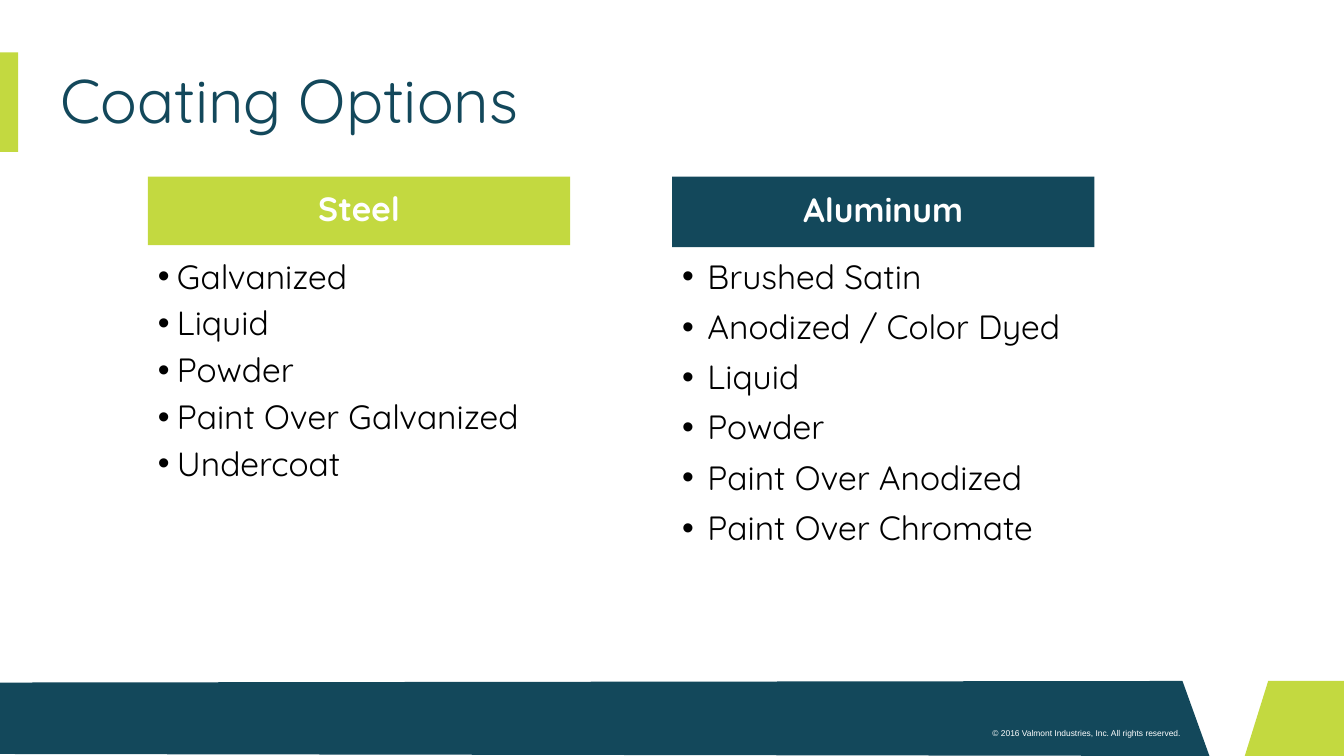
from dataclasses import dataclass

import lxml.etree
import pptx
import pptx.dml.color
import pptx.enum.shapes
import pptx.enum.text
import pptx.oxml.ns
import pptx.util

Cm = pptx.util.Cm
Align = pptx.enum.text.PP_ALIGN
Anchor = pptx.enum.text.MSO_ANCHOR


@dataclass(frozen=True)
class Theme:
    """Colours, fonts and type sizes of the slide."""
    navy: str = "13485B"
    lime: str = "C3D940"
    white: str = "FFFFFF"
    black: str = "000000"
    face: str = "Quicksand"
    legal_face: str = "Arial"
    title_size: int = 44
    body_size: int = 24
    legal_size: int = 6


THEME = Theme()


def paint(shape, color):
    """Give a shape a flat fill without outline or shadow."""
    shape.shadow.inherit = False
    shape.fill.solid()
    shape.fill.fore_color.rgb = pptx.dml.color.RGBColor.from_string(color)
    shape.line.fill.background()


def style(para, size, color, face=THEME.face, bold=False):
    """Set the font of a whole paragraph."""
    para.font.name = face
    para.font.size = pptx.util.Pt(size)
    para.font.bold = bold
    para.font.color.rgb = pptx.dml.color.RGBColor.from_string(color)


def add_panel(page, points, color):
    """Draw a filled polygon through points given in centimetres."""
    corners = [(Cm(x), Cm(y)) for x, y in points]
    builder = page.shapes.build_freeform(*corners[0], scale=1.0)
    builder.add_line_segments(corners[1:], close=True)
    paint(builder.convert_to_shape(), color)


def add_bar(page, left, top, width, height, color):
    """Draw a filled rectangle and return it."""
    bar = page.shapes.add_shape(pptx.enum.shapes.MSO_SHAPE.RECTANGLE,
                                Cm(left), Cm(top), Cm(width), Cm(height))
    paint(bar, color)
    return bar


def add_text_box(page, left, top, width, height, anchor=Anchor.TOP):
    """Add a wrapping text box and return its text frame."""
    box = page.shapes.add_textbox(Cm(left), Cm(top), Cm(width), Cm(height))
    frame = box.text_frame
    frame.word_wrap = True
    frame.vertical_anchor = anchor
    return frame


def add_heading(page, left, height, text, color):
    """Add the coloured heading of a column."""
    frame = add_bar(page, left, 4.45, 10.64, height, color).text_frame
    frame.vertical_anchor = Anchor.MIDDLE
    para = frame.paragraphs[0]
    para.text = text
    para.alignment = Align.CENTER
    para.line_spacing = 0.9
    style(para, THEME.body_size, THEME.white, bold=True)


def add_bullet(para, indent):
    """Give a paragraph a round bullet with a hanging indent."""
    properties = para._p.get_or_add_pPr()
    properties.set("marL", str(Cm(indent)))
    properties.set("indent", str(-Cm(indent)))
    qn = pptx.oxml.ns.qn
    lxml.etree.SubElement(properties, qn("a:buFont"), typeface="Arial")
    lxml.etree.SubElement(properties, qn("a:buChar"), char="•")


def add_list(page, left, items, indent, gap):
    """Add the bulleted options of a column."""
    frame = add_text_box(page, left, 6.43, 10.64, 9.7)
    for index, item in enumerate(items):
        para = frame.add_paragraph() if index else frame.paragraphs[0]
        para.text = item
        add_bullet(para, indent)
        para.line_spacing = 0.9
        para.space_before = pptx.util.Pt(gap if index else 0)
        style(para, THEME.body_size, THEME.black)


def add_frame(page):
    """Add the footer panels, the edge accent and the copyright line."""
    add_panel(page, [(0, 17.2), (29.8, 17.16), (30.48, 19.05), (0, 19)], THEME.navy)
    add_panel(page, [(33.87, 17.16), (31.96, 17.16), (31.37, 19.05), (33.87, 19.05)],
              THEME.lime)
    add_bar(page, 0, 1.32, 0.46, 2.51, THEME.lime)
    para = add_text_box(page, 23.65, 18.23, 6.35, 0.51).paragraphs[0]
    para.text = "© 2016 Valmont Industries, Inc. All rights reserved."
    para.alignment = Align.RIGHT
    style(para, THEME.legal_size, THEME.white, THEME.legal_face)


def add_title(page, text):
    """Add the slide title."""
    para = add_text_box(page, 1.27, 0.76, 29.21, 3.68, Anchor.MIDDLE).paragraphs[0]
    para.text = text
    para.line_spacing = 0.9
    style(para, THEME.title_size, THEME.navy)


def main():
    """Build the slide and save it."""
    deck = pptx.Presentation()
    deck.slide_width, deck.slide_height = Cm(33.87), Cm(19.05)
    page = deck.slides.add_slide(deck.slide_layouts[6])
    add_frame(page)
    add_title(page, "Coating Options")
    steel = ["Galvanized", "Liquid", "Powder", "Paint Over Galvanized", "Undercoat"]
    aluminum = ["Brushed Satin", "Anodized / Color Dyed", "Liquid", "Powder",
                "Paint Over Anodized", "Paint Over Chromate"]
    add_heading(page, 3.73, 1.73, "Steel", THEME.lime)
    add_list(page, 3.73, steel, indent=0.48, gap=7.5)
    add_heading(page, 16.94, 1.78, "Aluminum", THEME.navy)
    add_list(page, 16.94, aluminum, indent=0.64, gap=10)
    deck.save("out.pptx")


if __name__ == "__main__":
    main()
